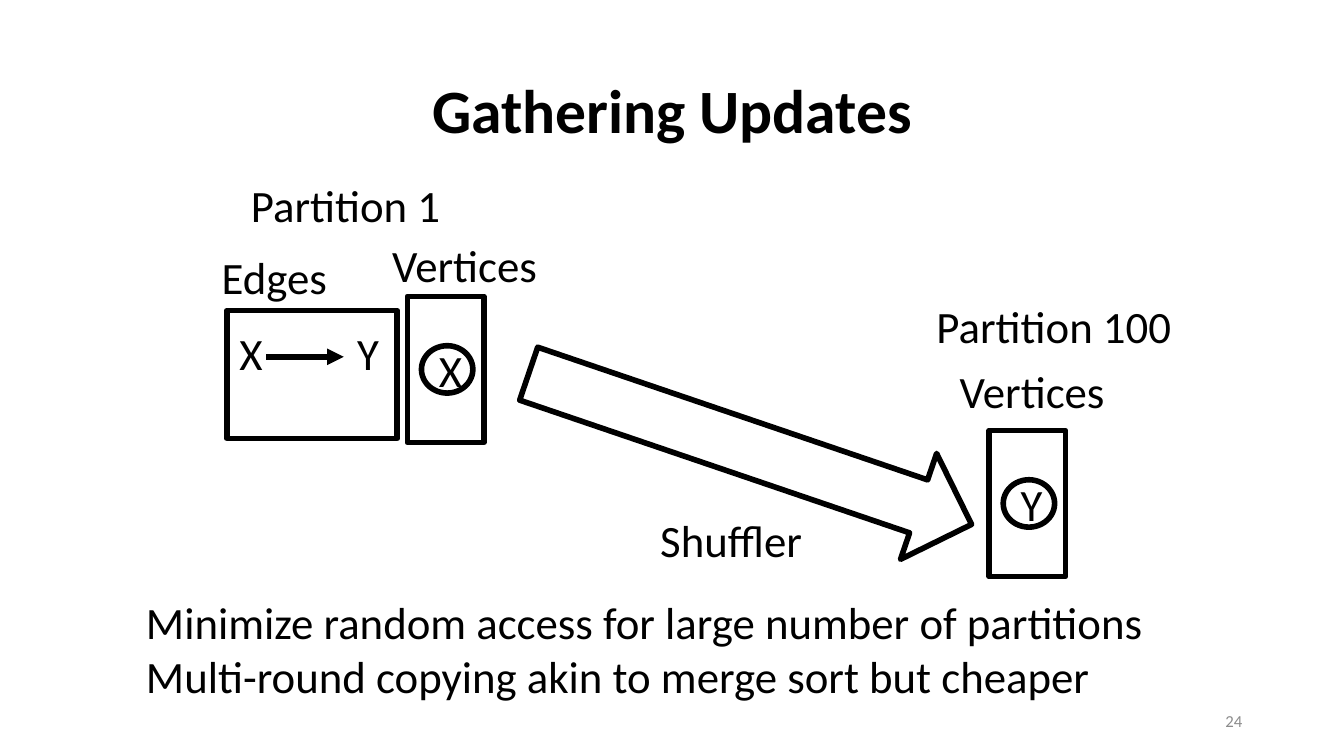
from pptx import Presentation, util as u
from pptx.dml.color import RGBColor
from pptx.enum import shapes, text
from pptx.oxml.ns import qn
from lxml import etree

# Content: lengths in px, 100 px to the inch
PX = 9144
BLACK = RGBColor(0x00, 0x00, 0x00)
GREY = RGBColor(0x8C, 0x8C, 0x8C)
LEFT, CENTER, RIGHT = text.PP_ALIGN.LEFT, text.PP_ALIGN.CENTER, text.PP_ALIGN.RIGHT

TITLE = ("Gathering Updates", (92, 40, 1150, 145))
PAGE = ("24", (942, 695, 300, 40))
LABELS = [  # wording, box, alignment
    ("Partition 1", (239, 171, 211, 64), LEFT),
    ("Edges", (210, 243, 126, 64), LEFT),
    ("Vertices", (379, 231, 165, 64), LEFT),
    ("X", (227, 318, 44, 64), CENTER),
    ("Y", (344, 318, 42, 64), CENTER),
    ("Partition 100", (919, 291, 256, 64), LEFT),
    ("Vertices", (942, 356, 165, 64), LEFT),
    ("Shuffler", (645, 504, 163, 64), LEFT),
    ("Minimize random access for large number of partitions\n"
     "Multi-round copying akin to merge sort but cheaper",
     (135, 585, 1020, 118), LEFT),
]
EDGE_LIST = (225, 308, 169, 127)
EDGE = (264, 354, 341, 354)
VERTEX_SETS = [("X", 404, 294), ("Y", 981, 427)]  # vertex, left, top
SET_SIZE = (76, 145)
VERTEX_SIZE = (51, 47)
SHUFFLE = (512, 390, 464, 111)
SHUFFLE_ANGLE = 18.8

BODY_FONT = {"name": "Calibri", "size": u.Pt(32)}
TITLE_FONT = {"name": "Calibri", "size": u.Pt(44), "bold": True}
PAGE_FONT = {"name": "Calibri", "size": u.Pt(12)}

deck = Presentation()
deck.slide_width, deck.slide_height = 1333 * PX, 750 * PX
slide = deck.slides.add_slide(deck.slide_layouts[5])


def emu(box):
    return [length * PX for length in box]


def write(frame, wording, font, align, color=BLACK):
    frame.text = wording
    for line in frame.paragraphs:
        line.alignment = align
        for name, value in font.items():
            setattr(line.runs[0].font, name, value)
        line.runs[0].font.color.rgb = color


def outline(preset, box):
    figure = slide.shapes.add_shape(preset, *emu(box))
    figure.shadow.inherit = False
    figure.fill.background()
    figure.line.color.rgb = BLACK
    figure.line.width = u.Pt(4)
    return figure


# Title
heading = slide.shapes.title
heading.left, heading.top, heading.width, heading.height = emu(TITLE[1])
write(heading.text_frame, TITLE[0], TITLE_FONT, CENTER)
heading.text_frame.vertical_anchor = text.MSO_ANCHOR.MIDDLE
heading.text_frame.paragraphs[0].line_spacing = 0.9

# Edge list with its edge
outline(shapes.MSO_SHAPE.RECTANGLE, EDGE_LIST)
edge = slide.shapes.add_connector(shapes.MSO_CONNECTOR.STRAIGHT, *emu(EDGE))
edge.line.color.rgb = BLACK
edge.line.width = u.Pt(4)
etree.SubElement(edge.line._get_or_add_ln(), qn("a:tailEnd"), type="triangle")
etree.SubElement(edge._element.spPr, qn("a:effectLst"))

# Vertex sets, each with a vertex in the middle
for vertex, left, top in VERTEX_SETS:
    outline(shapes.MSO_SHAPE.RECTANGLE, (left, top, *SET_SIZE))
    x = left + (SET_SIZE[0] - VERTEX_SIZE[0]) // 2 + 2
    y = top + (SET_SIZE[1] - VERTEX_SIZE[1]) // 2
    circle = outline(shapes.MSO_SHAPE.OVAL, (x, y, *VERTEX_SIZE))
    write(circle.text_frame, vertex, BODY_FONT, CENTER)
    circle.text_frame.vertical_anchor = text.MSO_ANCHOR.MIDDLE

# Shuffler arrow
outline(shapes.MSO_SHAPE.RIGHT_ARROW, SHUFFLE).rotation = SHUFFLE_ANGLE

# Labels and closing remarks
for wording, box, align in LABELS:
    label = slide.shapes.add_textbox(*emu(box)).text_frame
    label.word_wrap = False
    label.auto_size = text.MSO_AUTO_SIZE.SHAPE_TO_FIT_TEXT
    write(label, wording, BODY_FONT, align)

# Page number
page = slide.shapes.add_textbox(*emu(PAGE[1])).text_frame
page.word_wrap = True
page.vertical_anchor = text.MSO_ANCHOR.MIDDLE
write(page, PAGE[0], PAGE_FONT, RIGHT, GREY)

deck.save("out.pptx")
